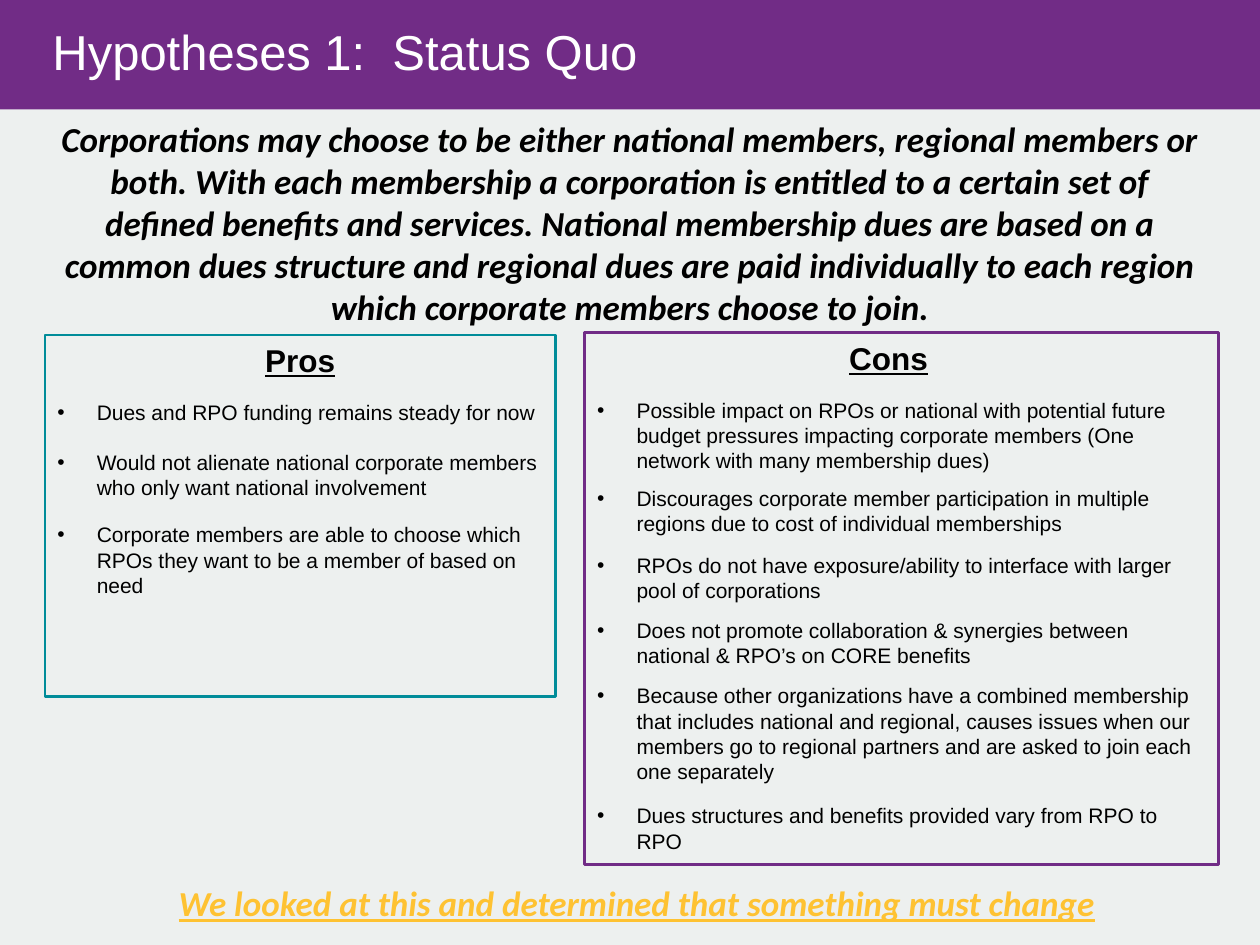
from lxml import etree
from pptx import Presentation
from pptx.dml.color import RGBColor
from pptx.enum.shapes import MSO_SHAPE
from pptx.enum.text import MSO_ANCHOR, PP_ALIGN
from pptx.oxml.ns import qn
from pptx.util import Pt

RECTANGLE = MSO_SHAPE.RECTANGLE
TOP, MIDDLE = MSO_ANCHOR.TOP, MSO_ANCHOR.MIDDLE
LEFT, CENTER = PP_ALIGN.LEFT, PP_ALIGN.CENTER
PURPLE = RGBColor(0x71, 0x2C, 0x86)
TEAL = RGBColor(0x00, 0x8C, 0x99)
PALE_GRAY = RGBColor(0xED, 0xF0, 0xEF)
GOLD = RGBColor(0xFE, 0xC2, 0x32)
WHITE = RGBColor(0xFF, 0xFF, 0xFF)
BLACK = RGBColor(0x00, 0x00, 0x00)
BULLET_INDENT = 22.5


def add_rectangle(left, top, width, height, fill=None, line=None):
    shape = slide.shapes.add_shape(RECTANGLE, Pt(left), Pt(top), Pt(width), Pt(height))
    shape.shadow.inherit = False
    if fill is None:
        shape.fill.background()
    else:
        shape.fill.solid()
        shape.fill.fore_color.rgb = fill
    if line is None:
        shape.line.fill.background()
    else:
        shape.line.color.rgb = line
        shape.line.width = Pt(1.5)
    return shape


def add_text(paragraph, text, size, color=BLACK, name="Arial", bold=False, italic=False, underline=False):
    run = paragraph.add_run()
    run.text = text
    font = run.font
    font.name, font.size, font.color.rgb = name, Pt(size), color
    font.bold, font.italic, font.underline = bold, italic, underline


presentation = Presentation()
presentation.slide_width, presentation.slide_height = Pt(720), Pt(540)
slide = presentation.slides.add_slide(presentation.slide_layouts[6])

# Title band and page background
add_rectangle(0, 0, 720, 64, fill=PURPLE)
add_rectangle(0, 62.5, 720, 477.5, fill=PALE_GRAY)

# Title, summary and conclusion: place, inset, anchor, alignment, line spacing, text, style
emphasis = {"name": "Calibri", "bold": True, "italic": True}
text_boxes = [
    ((30, 0, 660, 62.5), 0, MIDDLE, LEFT, 0.9, "Hypotheses 1:  Status Quo",
     {"size": 28, "color": WHITE}),
    ((30, 67, 660, 121), 0, TOP, CENTER, 1.0,
     "Corporations may choose to be either national members, regional members or both. "
     "With each membership a corporation is entitled to a certain set of defined benefits "
     "and services. National membership dues are based on a common dues structure and "
     "regional dues are paid individually to each region which corporate members choose to join.",
     {"size": 20, **emphasis}),
    ((95, 500.4, 616, 24.5), None, TOP, LEFT, 1.0,
     "We looked at this and determined that something must change",
     {"size": 20, "color": GOLD, "underline": True, **emphasis}),
]
for place, inset, anchor, alignment, line_spacing, text, style in text_boxes:
    frame = slide.shapes.add_textbox(*map(Pt, place)).text_frame
    frame.word_wrap = True
    frame.vertical_anchor = anchor
    if inset is not None:
        frame.margin_left = frame.margin_right = Pt(inset)
        frame.margin_top = frame.margin_bottom = Pt(inset)
    paragraph = frame.paragraphs[0]
    paragraph.alignment = alignment
    paragraph.line_spacing = line_spacing
    add_text(paragraph, text, **style)

# Pros and cons: place, line colour, heading, heading alignment, heading indent, (space before, point)
panels = [
    ((25.7, 191.4, 291.6, 206.6), TEAL, "Pros", CENTER, 0, [
        (12, "Dues and RPO funding remains steady for now"),
        (14, "Would not alienate national corporate members who only want national involvement"),
        (12.5, "Corporate members are able to choose which RPOs they want to be a member of based on need"),
    ]),
    ((334.2, 190, 362.2, 304), PURPLE, "Cons", LEFT, 144, [
        (12, "Possible impact on RPOs or national with potential future budget pressures "
             "impacting corporate members (One network with many membership dues)"),
        (7, "Discourages corporate member participation in multiple regions due to cost of "
            "individual memberships"),
        (9.5, "RPOs do not have exposure/ability to interface with larger pool of corporations"),
        (8.5, "Does not promote collaboration & synergies between national & RPO’s on CORE benefits"),
        (8.5, "Because other organizations have a combined membership that includes national and "
              "regional, causes issues when our members go to regional partners and are asked to "
              "join each one separately"),
        (11, "Dues structures and benefits provided vary from RPO to RPO"),
    ]),
]
for place, color, heading, alignment, heading_indent, points in panels:
    frame = add_rectangle(*place, line=color).text_frame
    frame.word_wrap = True
    frame.vertical_anchor = TOP
    paragraph = frame.paragraphs[0]
    paragraph.alignment = alignment
    paragraph._p.get_or_add_pPr().set("marL", str(Pt(heading_indent)))
    add_text(paragraph, heading, 18, bold=True, underline=True)
    for space_before, point in points:
        paragraph = frame.add_paragraph()
        paragraph.alignment = LEFT
        paragraph.space_before = Pt(space_before)
        properties = paragraph._p.get_or_add_pPr()
        properties.set("marL", str(Pt(BULLET_INDENT)))
        properties.set("indent", str(Pt(-BULLET_INDENT)))
        etree.SubElement(properties, qn("a:buFont"), typeface="Arial")
        etree.SubElement(properties, qn("a:buChar"), char="•")
        add_text(paragraph, point, 12)

presentation.save("out.pptx")
